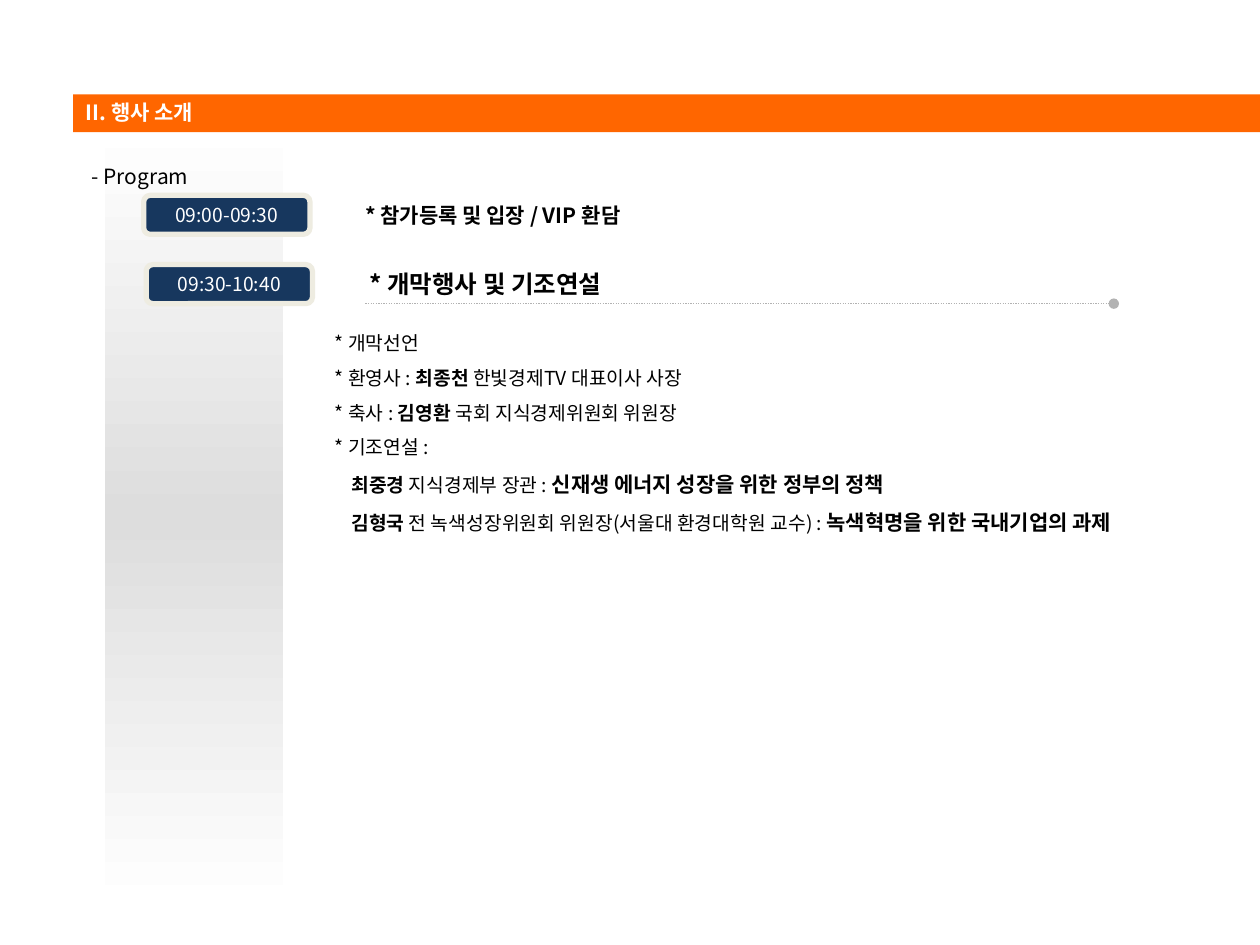
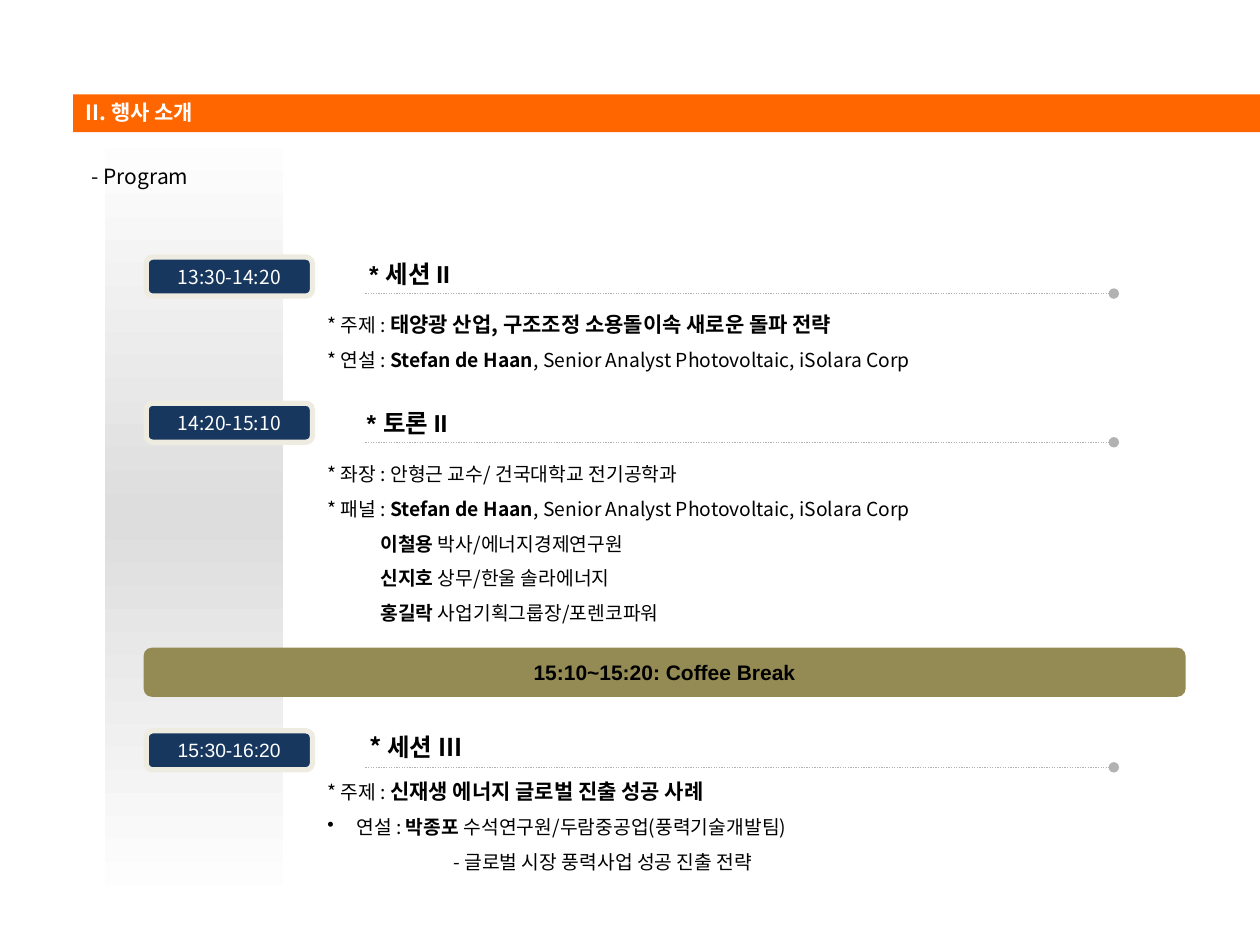
"""Build two programme slides of an energy conference."""
from copy import deepcopy
from dataclasses import dataclass
from typing import NamedTuple

from lxml import etree
from pptx import Presentation
from pptx.dml.color import RGBColor
from pptx.enum import dml, shapes, text
from pptx.oxml import ns
from pptx.util import Inches, Length, Pt


@dataclass(frozen=True)
class Theme:
    orange: RGBColor = RGBColor(0xFF, 0x66, 0x00)
    navy: RGBColor = RGBColor(0x17, 0x37, 0x5E)
    cream: RGBColor = RGBColor(0xEE, 0xEC, 0xE1)
    olive: RGBColor = RGBColor(0x94, 0x8A, 0x54)
    rule: RGBColor = RGBColor(0xB2, 0xB2, 0xB2)
    column: RGBColor = RGBColor(0xDD, 0xDD, 0xDD)
    white: RGBColor = RGBColor(0xFF, 0xFF, 0xFF)
    black: RGBColor = RGBColor(0, 0, 0)
    korean: str = "Noto Sans CJK KR"
    latin: str = "Arial"
    heading: Length = Pt(14)
    label: Length = Pt(12)
    body: Length = Pt(11)


THEME = Theme()


class Box(NamedTuple):
    left: float
    top: float
    width: float
    height: float

    def lengths(self) -> list[Length]:
        return [Inches(value) for value in self]


class Run(NamedTuple):
    words: str
    bold: bool = False
    size: Length | None = None


class Line(NamedTuple):
    runs: list[Run]
    indent: float = 0
    bullet: str = ""


class Style(NamedTuple):
    size: Length = THEME.body
    ink: RGBColor = THEME.black
    bold: bool = False
    font: str = THEME.korean
    align: text.PP_ALIGN = text.PP_ALIGN.LEFT
    spacing: float = 1.0


class Session(NamedTuple):
    time: str
    title: str
    chip_top: float
    title_top: float
    rule_top: float
    body: Box
    lines: list[Line]
    title_left: float = 2.74
    title_font: str = THEME.korean
    time_font: str = THEME.korean


def name(words: str) -> Run:
    return Run(words, bold=True)


def topic(words: str) -> Run:
    return Run(words, bold=True, size=THEME.label)


def write(shape, lines: list[Line], style: Style, margins: tuple[float, float] = (0.1, 0.05),
          anchor: text.MSO_ANCHOR = text.MSO_ANCHOR.TOP) -> None:
    frame = shape.text_frame
    frame.word_wrap = True
    frame.vertical_anchor = anchor
    frame.margin_left = frame.margin_right = Inches(margins[0])
    frame.margin_top = frame.margin_bottom = Inches(margins[1])
    for index, line in enumerate(lines):
        paragraph = frame.add_paragraph() if index else frame.paragraphs[0]
        paragraph.alignment = style.align
        paragraph.line_spacing = style.spacing
        font = paragraph.font
        font.size, font.bold, font.name = style.size, style.bold, style.font
        font.color.rgb = style.ink
        properties = paragraph._p.find(ns.qn("a:pPr"))
        defaults = properties.find(ns.qn("a:defRPr"))
        etree.SubElement(defaults, ns.qn("a:ea"), typeface=THEME.korean)
        properties.set("marL", str(int(Inches(line.indent))))
        properties.set("indent", str(-int(Inches(line.indent)) if line.bullet else 0))
        if line.bullet:
            defaults.addprevious(etree.Element(ns.qn("a:buChar"), char=line.bullet))
        for part in line.runs:
            run = paragraph.add_run()
            run.text = part.words
            if part.bold:
                run.font.bold = True
            if part.size:
                run.font.size = part.size


def add_text(slide, box: Box, lines: list[Line], style: Style,
             margins: tuple[float, float] = (0.1, 0.05),
             anchor: text.MSO_ANCHOR = text.MSO_ANCHOR.TOP) -> None:
    write(slide.shapes.add_textbox(*box.lengths()), lines, style, margins, anchor)


def add_panel(slide, box: Box, fill: RGBColor,
              kind: shapes.MSO_SHAPE = shapes.MSO_SHAPE.RECTANGLE):
    panel = slide.shapes.add_shape(kind, *box.lengths())
    panel.shadow.inherit = False
    panel.fill.solid()
    panel.fill.fore_color.rgb = fill
    panel.line.fill.background()
    return panel


def add_frame(slide) -> None:
    column = add_panel(slide, Box(0.83, 0.99, 1.42, 6.22), THEME.column)
    column.fill.gradient()
    column.fill.gradient_angle = 90
    first, last = column.fill.gradient_stops
    for stop, position, shade in ((first, 0, THEME.white), (last, 0.5, THEME.column)):
        stop.position = position
        stop.color.rgb = shade
    stops = column._element.spPr.find(f".//{ns.qn('a:gsLst')}")
    end = deepcopy(stops[0])
    end.set("pos", "100000")
    stops.append(end)
    add_panel(slide, Box(0.58, 0.75, 9.42, 0.3), THEME.orange)
    add_text(slide, Box(0.59, 0.75, 3, 0.29), [Line([Run("II. 행사 소개")])],
             Style(THEME.label, THEME.white, bold=True), (0.09, 0.04))
    add_text(slide, Box(0.59, 1.25, 5.46, 0.3), [Line([Run("- Program")], 0.04)],
             Style(THEME.label))


def add_chip(slide, left: float, top: float, time: str, font: str = THEME.korean) -> None:
    chip = add_panel(slide, Box(left, top, 1.32, 0.31), THEME.navy,
                     shapes.MSO_SHAPE.ROUNDED_RECTANGLE)
    chip.line.color.rgb = THEME.cream
    chip.line.width = Pt(3)
    write(chip, [Line([Run(time)])],
          Style(ink=THEME.white, font=font, align=text.PP_ALIGN.CENTER),
          anchor=text.MSO_ANCHOR.MIDDLE)


def add_rule(slide, top: float) -> None:
    rule = slide.shapes.add_connector(shapes.MSO_CONNECTOR.STRAIGHT, Inches(2.9), Inches(top),
                                      Inches(8.84), Inches(top))
    rule.line.color.rgb = THEME.rule
    rule.line.width = Pt(0.75)
    rule.line.dash_style = dml.MSO_LINE.ROUND_DOT
    outline = rule._element.spPr.find(ns.qn("a:ln"))
    etree.SubElement(outline, ns.qn("a:tailEnd"), type="oval")
    etree.SubElement(rule._element.spPr, ns.qn("a:effectLst"))


def add_session(slide, session: Session) -> None:
    add_chip(slide, 1.16, session.chip_top, session.time, session.time_font)
    add_text(slide, Box(session.title_left, session.title_top, 6.2, 0.31),
             [Line([Run(f"* {session.title}")])],
             Style(THEME.heading, bold=True, font=session.title_font),
             (0.19, 0.05), text.MSO_ANCHOR.MIDDLE)
    add_rule(slide, session.rule_top)
    add_text(slide, session.body, session.lines, Style(spacing=1.5))


SPEAKER = [name("Stefan de Haan"), Run(", Senior Analyst Photovoltaic, iSolara Corp")]

OPENING = Session("09:30-10:40", "개막행사 및 기조연설", 2.1, 2.1, 2.41, Box(2.56, 2.49, 7.07, 1.81), [
    Line([Run("* 개막선언")]),
    Line([Run("* 환영사 : "), name("최종천"), Run(" 한빛경제TV 대표이사 사장")]),
    Line([Run("* 축사 : "), name("김영환"), Run(" 국회 지식경제위원회 위원장")]),
    Line([Run("* 기조연설 :")]),
    Line([name("최중경"), Run(" 지식경제부 장관 : "),
          topic("신재생 에너지 성장을 위한 정부의 정책")], 0.13),
    Line([name("김형국"), Run(" 전 녹색성장위원회 위원장(서울대 환경대학원 교수) : "),
          topic("녹색혁명을 위한 국내기업의 과제")], 0.13),
])

AFTERNOON = [
    Session("13:30-14:20", "세션 II", 2.04, 2.02, 2.33, Box(2.5, 2.32, 7.5, 0.68), [
        Line([Run("* 주제 : "), topic("태양광 산업, 구조조정 소용돌이속 새로운 돌파 전략")]),
        Line([Run("* 연설 : "), *SPEAKER]),
    ], title_font=THEME.latin),
    Session("14:20-15:10", "토론 II", 3.2, 3.2, 3.51, Box(2.5, 3.53, 6.36, 1.48), [
        Line([Run("* 좌장 : 안형근 교수/ 건국대학교 전기공학과")]),
        Line([Run("* 패널 : "), *SPEAKER]),
        Line([name("이철용"), Run(" 박사/에너지경제연구원")], 0.42),
        Line([name("신지호"), Run(" 상무/한울 솔라에너지")], 0.42),
        Line([name("홍길락"), Run(" 사업기획그룹장/포렌코파워")], 0.42),
    ], title_left=2.72, title_font=THEME.latin),
    Session("15:30-16:20", "세션 III", 5.8, 5.77, 6.09, Box(2.5, 6.03, 7.5, 0.95), [
        Line([Run("* 주제 : "), topic("신재생 에너지 글로벌 진출 성공 사례")]),
        Line([Run("연설 : "), name("박종포"), Run(" 수석연구원/두람중공업(풍력기술개발팀)")],
             0.23, "•"),
        Line([Run("- 글로벌 시장 풍력사업 성공 진출 전략")], 1),
    ], time_font=THEME.latin),
]


def add_morning(slide) -> None:
    add_frame(slide)
    add_session(slide, OPENING)
    add_chip(slide, 1.14, 1.55, "09:00-09:30")
    add_text(slide, Box(2.8, 1.56, 4, 0.3), [Line([Run("* 참가등록 및 입장 / VIP 환담")])],
             Style(THEME.label, bold=True))


def add_afternoon(slide) -> None:
    add_frame(slide)
    for session in AFTERNOON:
        add_session(slide, session)
    coffee_break = add_panel(slide, Box(1.14, 5.14, 8.27, 0.39), THEME.olive,
                             shapes.MSO_SHAPE.ROUNDED_RECTANGLE)
    write(coffee_break, [Line([Run("15:10~15:20: Coffee Break")])],
          Style(THEME.label, bold=True, font=THEME.latin, align=text.PP_ALIGN.CENTER),
          anchor=text.MSO_ANCHOR.MIDDLE)


def main() -> None:
    presentation = Presentation()
    presentation.slide_width, presentation.slide_height = Inches(10), Inches(7.5)
    for build in (add_morning, add_afternoon):
        build(presentation.slides.add_slide(presentation.slide_layouts[6]))
    presentation.save("out.pptx")


if __name__ == "__main__":
    main()
